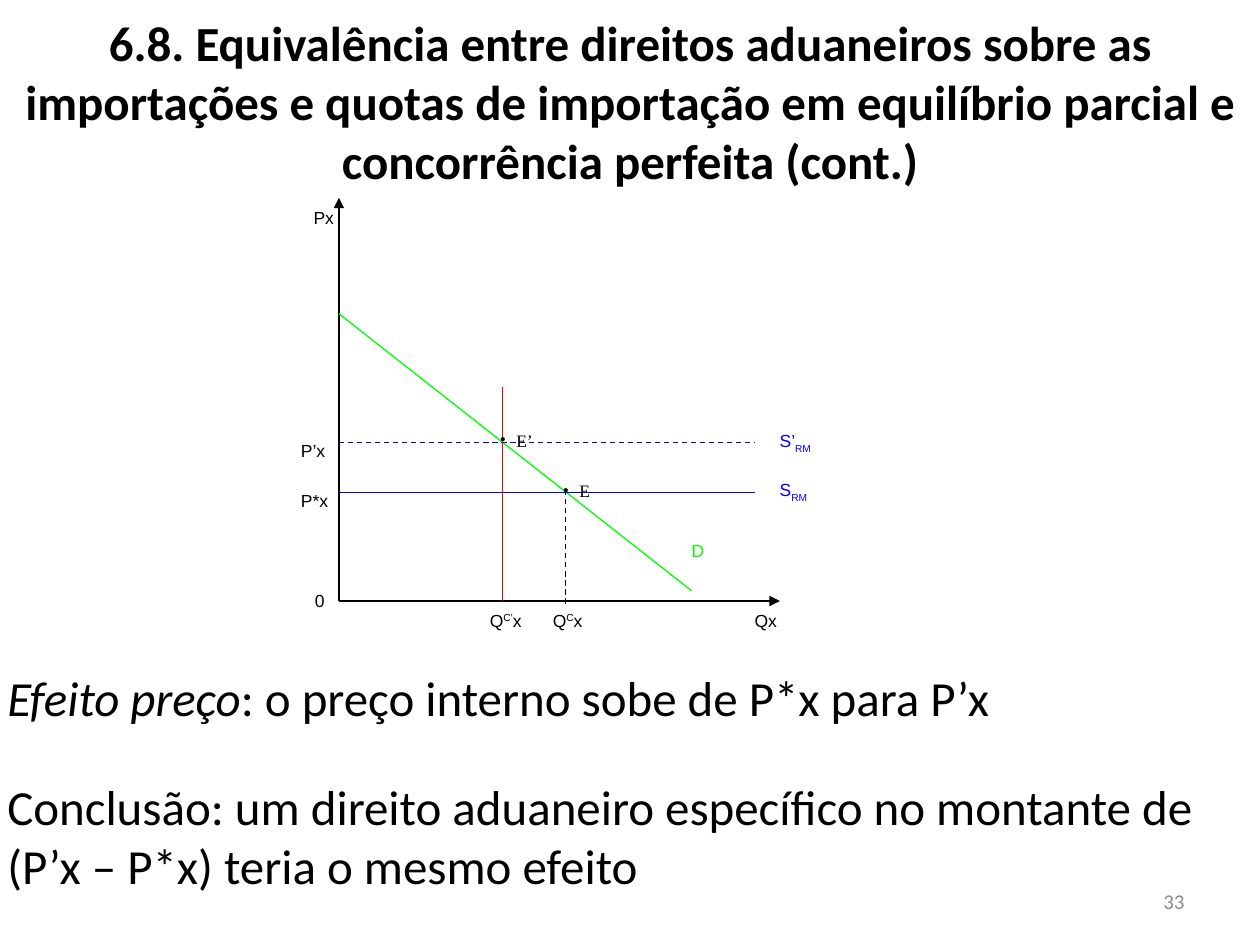
from lxml import etree
from pptx import Presentation
from pptx import util as u
from pptx.dml.color import RGBColor
from pptx.enum import dml, shapes, text
from pptx.oxml.ns import qn

COLORS = {"black": "000000", "grey": "8C8C8C", "demand": "00FF00",
          "supply": "0000FF", "quota": "FF0000"}
LEFT, CENTER, RIGHT = text.PP_ALIGN.LEFT, text.PP_ALIGN.CENTER, text.PP_ALIGN.RIGHT
TOP, MIDDLE = text.MSO_ANCHOR.TOP, text.MSO_ANCHOR.MIDDLE


class SlideBuilder:
    body = {"name": "Calibri", "size": u.Pt(28)}
    label_style = {"name": "Arial", "size": u.Pt(10)}
    point_style = {"name": "Times New Roman", "size": u.Pt(10)}
    line_width = u.Pt(0.75)

    def __init__(self, prs):
        self.slide = prs.slides.add_slide(prs.slide_layouts[5])

    def fill_text(self, shape, runs, style, color="black", align=LEFT, anchor=TOP, grow=False):
        frame = shape.text_frame
        frame_format = {
            "word_wrap": True,
            "vertical_anchor": anchor,
            "auto_size": text.MSO_AUTO_SIZE.SHAPE_TO_FIT_TEXT if grow else text.MSO_AUTO_SIZE.NONE,
        }
        for key, value in frame_format.items():
            setattr(frame, key, value)
        paragraph = frame.paragraphs[0]
        paragraph.alignment = align
        for words, extra in runs:
            run = paragraph.add_run()
            run.text = words
            run.font.color.rgb = RGBColor.from_string(COLORS[color])
            for key, value in {**style, **extra}.items():
                if key == "baseline":
                    run.font._element.set(key, str(value * 1000))
                else:
                    setattr(run.font, key, value)
        return paragraph

    def title(self, words, box):
        heading = self.slide.shapes.title
        for key, value in zip(("left", "top", "width", "height"), box):
            setattr(heading, key, u.Inches(value))
        self.fill_text(heading, [(words, {"bold": True})], self.body, align=CENTER, grow=True)

    def text(self, box, runs, style, **options):
        area = self.slide.shapes.add_textbox(*map(u.Inches, box))
        return self.fill_text(area, runs, style, **options)

    def label(self, left, top, *runs, color="black"):
        pieces = [run if isinstance(run, tuple) else (run, {}) for run in runs]
        self.text((left, top, 0.8, 0.3), pieces, self.label_style, color=color)

    def point(self, left, top, name):
        paragraph = self.text((left, top, 0.8, 0.3), [(name, {})], self.point_style)
        props = paragraph._p.get_or_add_pPr()
        props.set("marL", str(u.Inches(0.21)))
        props.set("indent", str(-u.Inches(0.13)))
        etree.SubElement(props, qn("a:buFont")).set("typeface", self.point_style["name"])
        etree.SubElement(props, qn("a:buChar")).set("char", "•")

    def line(self, start, end, color="black", dashed=False, arrow=False):
        segment = self.slide.shapes.add_connector(
            shapes.MSO_CONNECTOR.STRAIGHT, *map(u.Inches, (*start, *end)))
        segment.line.color.rgb = RGBColor.from_string(COLORS[color])
        segment.line.width = self.line_width
        if dashed:
            segment.line.dash_style = dml.MSO_LINE.DASH
        if arrow:
            etree.SubElement(segment.line._get_or_add_ln(), qn("a:tailEnd")).set("type", "triangle")
        etree.SubElement(segment._element.spPr, qn("a:effectLst"))


def main():
    prs = Presentation()
    prs.slide_width, prs.slide_height = u.Inches(10), u.Inches(7.5)
    page = SlideBuilder(prs)

    page.title("6.8. Equivalência entre direitos aduaneiros sobre as importações e quotas "
               "de importação em equilíbrio parcial e concorrência perfeita (cont.)",
               (0, 0.05, 10, 1.51))
    page.text((7.17, 6.95, 2.33, 0.4), [("33", {})], {**page.body, "size": u.Pt(12)},
              color="grey", align=RIGHT, anchor=MIDDLE)
    page.text((-0.04, 5.25, 10, 0.57),
              [("Efeito preço", {"italic": True}), (": o preço interno sobe de P*x para P’x", {})],
              page.body, anchor=MIDDLE, grow=True)
    page.text((-0.04, 6.11, 10, 1.04),
              [("Conclusão: um direito aduaneiro específico no montante de "
                "(P’x – P*x) teria o mesmo efeito", {})],
              page.body, anchor=MIDDLE, grow=True)

    origin_x, origin_y = 2.69, 4.77
    supply_end = 5.99
    free_price, tariff_price = 3.91, 3.51
    free_quantity, quota_quantity = 4.49, 3.99
    page.line((origin_x, origin_y), (origin_x, 1.57), arrow=True)
    page.line((origin_x, origin_y), (6.19, origin_y), arrow=True)
    page.line((origin_x, 2.49), (5.49, 4.69), "demand")
    page.line((origin_x, free_price), (supply_end, free_price), "supply")
    page.line((origin_x, tariff_price), (supply_end, tariff_price), "supply", dashed=True)
    page.line((free_quantity, 3.89), (free_quantity, 4.79), dashed=True)
    page.line((quota_quantity, 3.07), (quota_quantity, origin_y), "quota")

    page.point(free_quantity - 0.2, free_price - 0.15, "E")
    page.point(quota_quantity - 0.2, tariff_price - 0.15, "E’")

    raised, lowered = {"baseline": 30}, {"baseline": -30}
    page.label(5.89, 4.79, "Qx")
    page.label(free_quantity - 0.2, 4.79, "Q", ("C", raised), "x")
    page.label(quota_quantity - 0.2, 4.79, "Q", ("C’", raised), "x")
    page.label(2.4, 4.63, "0")
    page.label(5.39, 4.24, "D", color="demand")
    page.label(6.09, free_price - 0.16, "S", ("RM", lowered), color="supply")
    page.label(6.09, tariff_price - 0.15, "S’", ("RM", lowered), color="supply")
    page.label(2.29, free_price - 0.07, "P*x")
    page.label(2.29, tariff_price - 0.07, "P’x")
    page.label(2.39, 1.59, "Px")

    prs.save("out.pptx")


if __name__ == "__main__":
    main()
